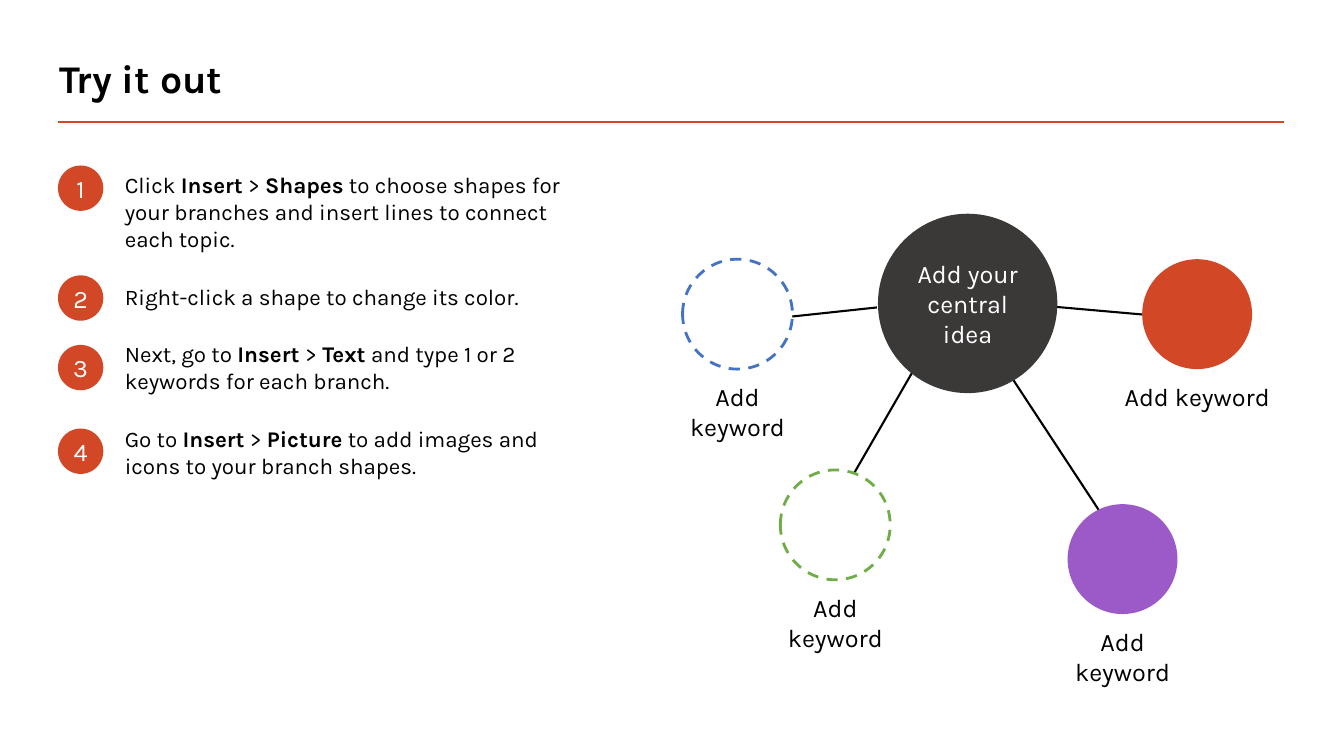
import pptx
import pptx.util
import pptx.dml.color
import pptx.enum.dml
import pptx.enum.shapes
import pptx.enum.text
from dataclasses import dataclass
from lxml import etree


@dataclass(frozen=True)
class Theme:
    font: str = "Karla"
    red: str = "D24726"
    blue: str = "4472C4"
    green: str = "70AD47"
    purple: str = "9B5AC8"
    dark: str = "3B3838"
    black: str = "000000"
    white: str = "FFFFFF"
    head: float = 28
    label: float = 18
    body: float = 16
    thick: float = 2
    thin: float = 1.5


look = Theme()
COLS, ROWS = 40, 22.5
TITLE = "Try it out"
STEPS = [
    "Click *Insert* > *Shapes* to choose shapes for your branches and insert lines to connect each topic.",
    "Right-click a shape to change its color.",
    "Next, go to *Insert *>* Text *and type 1 or 2 keywords for each branch.",
    "Go to *Insert* > *Picture* to add images and icons to your branch shapes.",
]
HEAD = (1.47, 1.35, 30, 2.1)
RULE = (1.74, 3.63, 38.22, 3.63)
GUIDE = (3.42, 4.95, 14.37, 11.97)
BADGE_X, BADGE_D = 2.4, 1.35
BADGE_Y = [5.6, 8.87, 10.94, 13.43]
HUB = ("Add your central idea", 28.8, 9.03, 5.34)
KEYWORD = "Add keyword"
NODE_D, DROP = 3.27, 1.85
NODES = [
    dict(x=21.95, y=9.35, line=look.blue, wide=3.93, high=2.13),
    dict(x=24.86, y=15.62, line=look.green, wide=3.93, high=2.13),
    dict(x=33.41, y=16.64, fill=look.purple, wide=3.93, high=2.13),
    dict(x=35.63, y=9.35, fill=look.red, wide=5.28, high=1.2),
]
LINKS = [
    (26.1, 9.15, 23.58, 9.42),
    (27.21, 10.98, 25.41, 14.1),
    (30.12, 11.25, 32.88, 15.45),
    (30.93, 9.09, 33.99, 9.36),
]

deck = pptx.Presentation()
deck.slide_width = pptx.util.Inches(13.33)
deck.slide_height = pptx.util.Inches(7.5)
slide = deck.slides.add_slide(deck.slide_layouts[5])
shapes = slide.shapes
align = pptx.enum.text.PP_ALIGN
anchor = pptx.enum.text.MSO_ANCHOR


def place(*spots):
    sides = (deck.slide_width / COLS, deck.slide_height / ROWS) * 2
    return [round(spot * side) for spot, side in zip(spots, sides)]


def ink(code):
    return pptx.dml.color.RGBColor.from_string(code)


def write(shape, text, size=look.label, color=look.black, bold=False,
          side=align.CENTER, stand=anchor.TOP, before=0, after=0, lead=1, inset=None):
    frame = shape.text_frame
    frame.word_wrap = True
    frame.vertical_anchor = stand
    if inset is not None:
        frame.margin_left = frame.margin_right = inset
        frame.margin_top = frame.margin_bottom = inset
    for row, line in enumerate(text if isinstance(text, list) else [text]):
        para = frame.add_paragraph() if row else frame.paragraphs[0]
        para.alignment = side
        para.line_spacing = lead
        para.space_before = pptx.util.Pt(before if row else 0)
        para.space_after = pptx.util.Pt(after)
        for part, words in enumerate(line.split("*")):
            run = para.add_run()
            run.text = words
            run.font.name = look.font
            run.font.size = pptx.util.Pt(size)
            run.font.bold = bold or part % 2 == 1
            run.font.color.rgb = ink(color)


def label(spot, text, **style):
    write(shapes.add_textbox(*place(*spot)), text, **style)


def circle(x, y, size, fill=None, line=None):
    spot = place(x - size / 2, y - size / 2, size, size)
    disc = shapes.add_shape(pptx.enum.shapes.MSO_SHAPE.OVAL, *spot)
    disc.shadow.inherit = False
    if fill:
        disc.fill.solid()
        disc.fill.fore_color.rgb = ink(fill)
    else:
        disc.fill.background()
    if line:
        disc.line.color.rgb = ink(line)
        disc.line.width = pptx.util.Pt(look.thick)
        disc.line.dash_style = pptx.enum.dml.MSO_LINE.DASH
    else:
        disc.line.fill.background()
    return disc


def link(ends, color, width):
    wire = shapes.add_connector(pptx.enum.shapes.MSO_CONNECTOR.STRAIGHT, *place(*ends))
    wire.line.color.rgb = ink(color)
    wire.line.width = pptx.util.Pt(width)
    etree.SubElement(wire._element.spPr, pptx.oxml.ns.qn("a:effectLst"))


def main():
    title = shapes.title
    title.left, title.top, title.width, title.height = place(*HEAD)
    write(title, TITLE, size=look.head, bold=True, side=align.LEFT,
          stand=anchor.MIDDLE, lead=0.9)
    link(RULE, look.red, look.thick)

    for num, y in enumerate(BADGE_Y, 1):
        badge = circle(BADGE_X, y, BADGE_D, fill=look.red)
        write(badge, str(num), color=look.white, stand=anchor.MIDDLE, inset=0)
    label(GUIDE, STEPS, size=look.body, side=align.LEFT, before=10, after=12)

    for ends in LINKS:
        link(ends, look.black, look.thin)
    for node in NODES:
        x, y, wide = node["x"], node["y"], node["wide"]
        circle(x, y, NODE_D, fill=node.get("fill"), line=node.get("line"))
        label((x - wide / 2, y + DROP, wide, node["high"]), KEYWORD)
    text, x, y, size = HUB
    write(circle(x, y, size, fill=look.dark), text, color=look.white,
          stand=anchor.MIDDLE, inset=0)
    deck.save("out.pptx")


if __name__ == "__main__":
    main()
